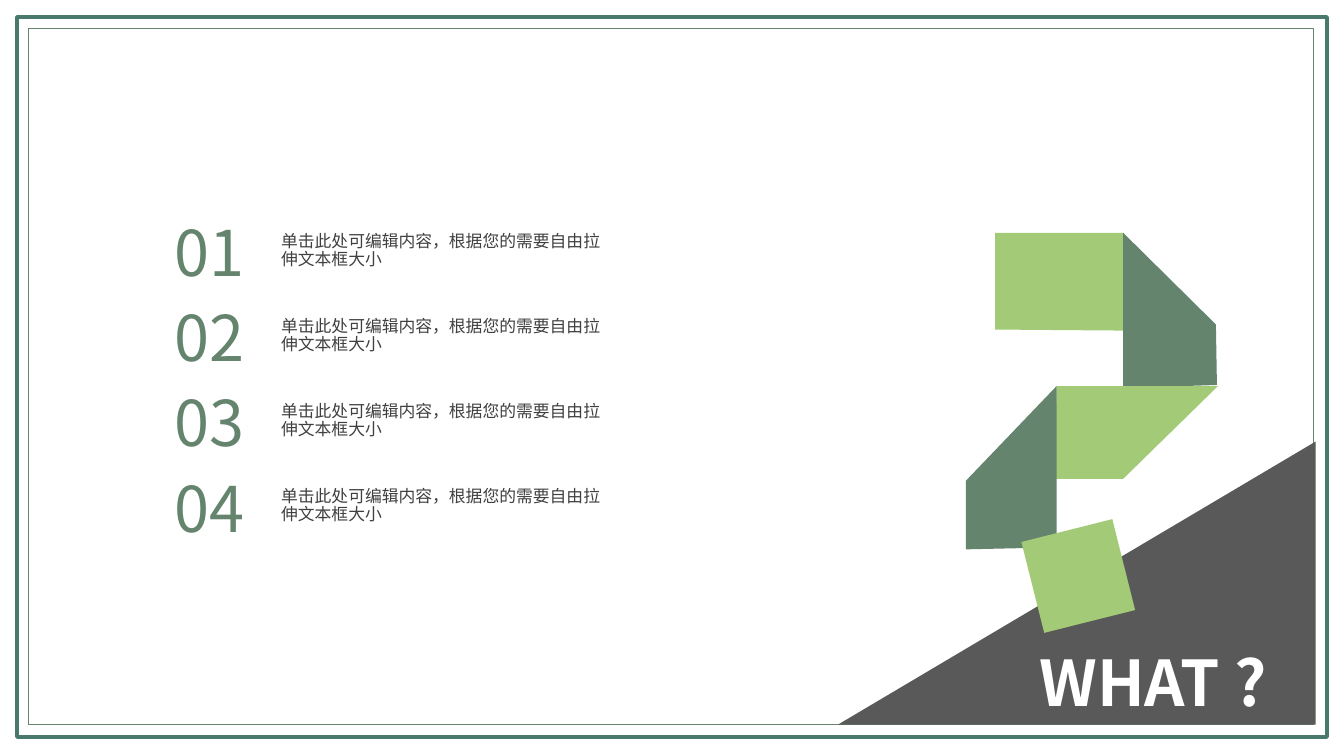
from typing import NamedTuple

from lxml import etree
from pptx import Presentation
from pptx import util as u
from pptx.dml.color import RGBColor
from pptx.enum import shapes, text
from pptx.oxml.ns import qn

CELL = u.Inches(0.1)  # every length below counts cells of this square grid
FONT = "Noto Sans CJK SC"
TEAL = RGBColor(0x49, 0x78, 0x6D)
GREEN = RGBColor(0x64, 0x84, 0x6E)
LIME = RGBColor(0xA2, 0xCA, 0x77)
DARK = RGBColor(0x59, 0x59, 0x59)
BODY = RGBColor(0x40, 0x40, 0x40)
WHITE = RGBColor(0xFF, 0xFF, 0xFF)

ITEM_TEXT = "单击此处可编辑内容，根据您的需要自由拉伸文本框大小"
ITEMS = [("01", ITEM_TEXT), ("02", ITEM_TEXT), ("03", ITEM_TEXT), ("04", ITEM_TEXT)]


class Box(NamedTuple):
    left: float
    top: float
    width: float
    height: float

    def inner(self, left, top, width, height):
        """Return a box placed relative to this one."""
        return Box(self.left + left, self.top + top, width, height)

    def emu(self):
        return [round(length * CELL) for length in self]


def style_shape(shape, fill=None, line=None, weight=0):
    shape.shadow.inherit = False
    if fill is None:
        shape.fill.background()
    else:
        shape.fill.solid()
        shape.fill.fore_color.rgb = fill
    if line is None:
        shape.line.fill.background()
    else:
        shape.line.color.rgb = line
        shape.line.width = u.Pt(weight)


def add_preset(slide, kind, box, **style):
    shape = slide.shapes.add_shape(kind, *box.emu())
    style_shape(shape, **style)
    return shape


def write(shape, content, size, color, bold=False):
    """Fill a text shape with one left-aligned paragraph and return it."""
    frame = shape.text_frame
    frame.word_wrap = True
    frame.auto_size = text.MSO_AUTO_SIZE.NONE
    frame.vertical_anchor = text.MSO_ANCHOR.TOP
    paragraph = frame.paragraphs[0]
    paragraph.text = content
    paragraph.alignment = text.PP_ALIGN.LEFT
    font = paragraph.font
    font.size, font.bold, font.name = u.Pt(size), bold, FONT
    font.color.rgb = color
    defaults = paragraph._p.pPr.find(qn("a:defRPr"))
    etree.SubElement(defaults, qn("a:ea")).set("typeface", FONT)
    return paragraph


def add_frames(slide, outer, inner):
    rectangle = shapes.MSO_SHAPE.RECTANGLE
    add_preset(slide, rectangle, outer, line=TEAL, weight=3)
    add_preset(slide, rectangle, inner, line=GREEN, weight=0.5)


def add_corner(slide, box):
    """Draw the dark corner triangle with the title on it."""
    triangle = add_preset(slide, shapes.MSO_SHAPE.RIGHT_TRIANGLE, box, fill=DARK)
    triangle.element.spPr.find(qn("a:xfrm")).set("flipH", "1")
    title = slide.shapes.title
    title.left, title.top, title.width, title.height = box.inner(19, 19.5, 30.6, 8.6).emu()
    write(title, "WHAT ?", 45, WHITE, bold=True)
    triangle.element.addnext(title.element)


def add_question_mark(slide, box):
    """Fold a ribbon into a question mark, with a tilted square as its dot."""
    folds = [
        (LIME, [(2.9, 0), (15.7, 0), (15.6, 9.7), (2.9, 9.6)]),
        (GREEN, [(15.6, 0), (24.8, 9.1), (24.9, 15.1), (15.6, 15.4)]),
        (LIME, [(25, 15.2), (15.6, 24.4), (8.8, 24.4), (9, 15.2)]),
        (GREEN, [(9, 15.2), (0, 24.6), (0, 31.4), (9, 31.2)]),
    ]
    for color, corners in folds:
        points = [box.inner(x, y, 0, 0).emu()[:2] for x, y in corners]
        builder = slide.shapes.build_freeform(*points[0])
        builder.add_line_segments(points[1:], close=True)
        style_shape(builder.convert_to_shape(), fill=color)
    dot = add_preset(slide, shapes.MSO_SHAPE.RECTANGLE,
                     box.inner(6.5, 29.4, 9.3, 9.3), fill=LIME)
    dot.rotation = 345.9


def add_items(slide, box):
    pitch = box.height / len(ITEMS)
    for row, (number, content) in enumerate(ITEMS):
        number_box = box.inner(0, row * pitch, 10.5, 8.6)
        text_box = box.inner(10.6, row * pitch + 1.9, 34.3, 4.6)
        write(slide.shapes.add_textbox(*number_box.emu()), number, 45, GREEN)
        paragraph = write(slide.shapes.add_textbox(*text_box.emu()), content, 12, BODY)
        paragraph.line_spacing = 0.9
        paragraph.space_before = u.Pt(10)


def main():
    presentation = Presentation()
    presentation.slide_width = u.Inches(13.33)
    presentation.slide_height = u.Inches(7.5)
    slide = presentation.slides.add_slide(presentation.slide_layouts.get_by_name("Title Only"))
    add_frames(slide, Box(1.7, 1.7, 129.9, 71.4), Box(2.8, 2.8, 127.5, 69.1))
    add_corner(slide, Box(83.1, 43.8, 47.4, 28.1))
    add_question_mark(slide, Box(95.8, 23.1, 25, 38.7))
    add_items(slide, Box(16.3, 20.7, 44.9, 33.8))
    presentation.save("out.pptx")


if __name__ == "__main__":
    main()
